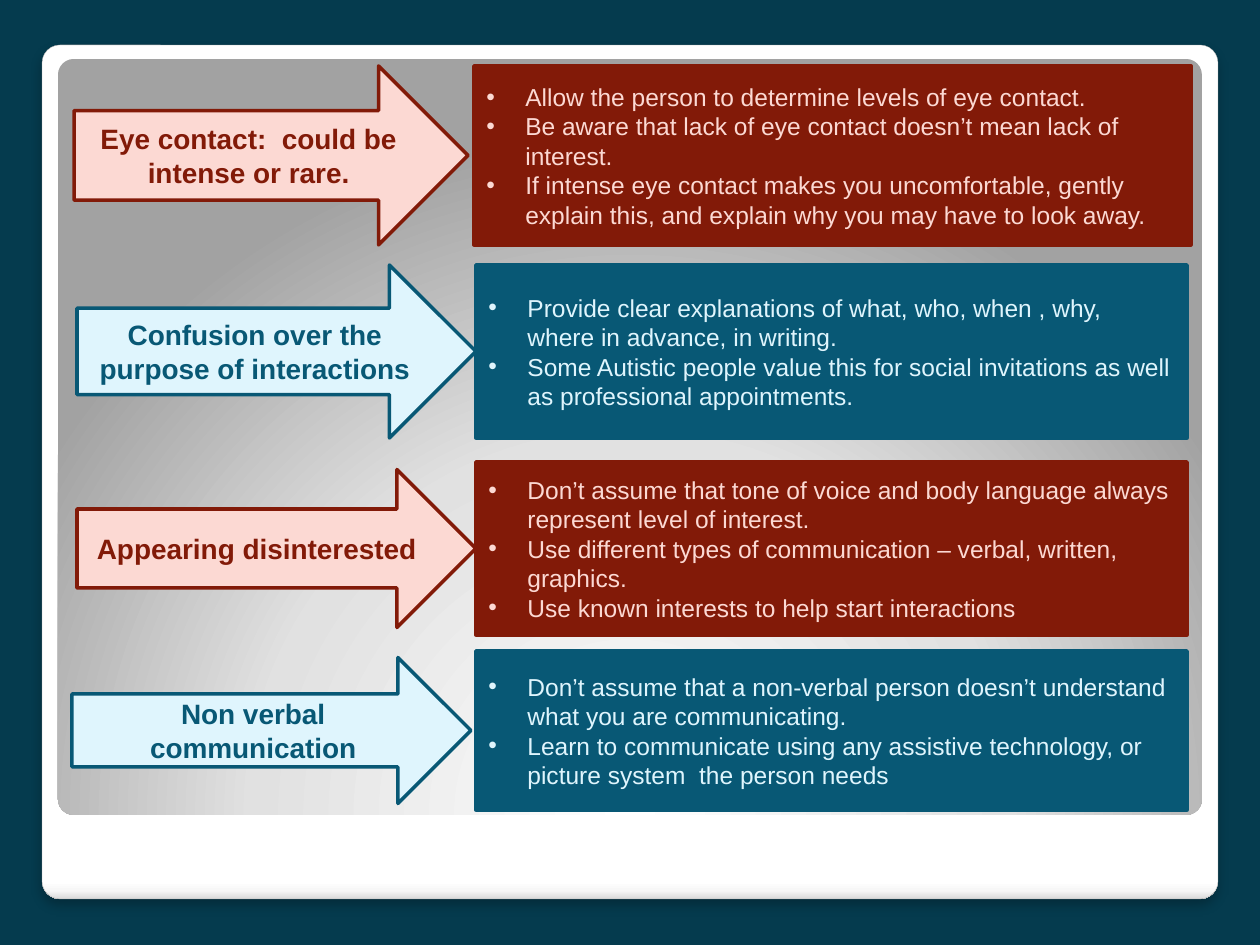
from lxml import etree
from pptx import Presentation, util as u
from pptx.dml.color import RGBColor
from pptx.enum import shapes, text
from pptx.oxml import parse_xml
from pptx.oxml.ns import nsdecls, qn

PX = 914400 / 126
FONT = "Arial"
COLORS = {
    "page": "053B4E", "card_line": "A4A4A4", "shadow": "000000",
    "red": "821A08", "pink": "FCD9D3", "blue": "085875", "ice": "DFF5FD",
}
CARD_STOPS = [(0, "FFFFFF"), (98, "FFFFFF"), (99, "F7F7F7"), (100, "DADADA")]
PANEL_STOPS = [(0, "FFFFFF"), (55, "E1E1E1"), (100, "A2A2A2")]
LINEAR = '<a:lin ang="5400000" scaled="0"/>'
RADIAL = ('<a:path path="circle"><a:fillToRect l="50000" t="175000" '
          'r="50000" b="-75000"/></a:path>')

# Row box, arrow left, arrow width, arrow height, dark, light, title, advice
ROWS = [
    ((474, 66, 717, 179), 74, 394, 179, "red", "pink",
     "Eye contact:  could be intense or rare.",
     ["Allow the person to determine levels of eye contact.",
      "Be aware that lack of eye contact doesn’t mean lack of interest.",
      "If intense eye contact makes you uncomfortable, gently explain this, "
      "and explain why you may have to look away."]),
    ((476, 265, 711, 173), 77, 399, 173, "blue", "ice",
     "Confusion over the purpose of interactions",
     ["Provide clear explanations of what, who, when , why, where in advance, "
      "in writing.",
      "Some Autistic people value this for social invitations as well as "
      "professional appointments."]),
    ((476, 462, 711, 173), 77, 399, 158, "red", "pink",
     "Appearing disinterested",
     ["Don’t assume that tone of voice and body language always represent "
      "level of interest.",
      "Use different types of communication – verbal, written, graphics.",
      "Use known interests to help start interactions"]),
    ((476, 651, 711, 159), 72, 399, 146, "blue", "ice",
     "Non verbal communication",
     ["Don’t assume that a non-verbal person doesn’t understand what you are "
      "communicating.",
      "Learn to communicate using any assistive technology, or picture system "
      " the person needs"]),
]


def px(length):
    return u.Emu(round(length * PX))


def rgb(name):
    return RGBColor.from_string(COLORS[name])


def add_block(page, kind, box):
    shape = page.shapes.add_shape(kind, *map(px, box))
    shape.shadow.inherit = False
    return shape


def add_gradient_panel(page, box, stops, direction):
    panel = add_block(page, shapes.MSO_SHAPE.ROUNDED_RECTANGLE, box)
    panel.adjustments[0] = 0.021
    panel.line.fill.background()
    panel.fill.background()
    marks = "".join(f'<a:gs pos="{pos * 1000}"><a:srgbClr val="{color}"/></a:gs>'
                    for pos, color in stops)
    gradient = parse_xml(f'<a:gradFill {nsdecls("a")} rotWithShape="1">'
                         f'<a:gsLst>{marks}</a:gsLst>{direction}</a:gradFill>')
    properties = panel.element.spPr
    properties.replace(properties.find(qn("a:noFill")), gradient)
    return panel


def add_background(page):
    page.background.fill.solid()
    page.background.fill.fore_color.rgb = rgb("page")

    # White card with a soft shadow
    card = add_gradient_panel(page, (42, 45, 1176, 854), CARD_STOPS, LINEAR)
    card.line.color.rgb = rgb("card_line")
    card.line.width = u.Pt(0.16)
    effects = card.element.spPr.find(qn("a:effectLst"))
    shadow = etree.SubElement(effects, qn("a:outerShdw"), blurRad=str(u.Pt(6)),
                              dist=str(u.Pt(4)), dir="5400000", rotWithShape="0")
    color = etree.SubElement(shadow, qn("a:srgbClr"), val=COLORS["shadow"])
    etree.SubElement(color, qn("a:alpha"), val="25000")

    # Grey panel lit from below
    add_gradient_panel(page, (58, 59, 1144, 756), PANEL_STOPS, RADIAL)


def paint(shape, fill, line):
    shape.fill.solid()
    shape.fill.fore_color.rgb = rgb(fill)
    shape.line.color.rgb = rgb(line)
    shape.line.width = u.Pt(2)


def write(shape, lines, size, color, align, bold=False):
    frame = shape.text_frame
    frame.word_wrap = True
    frame.vertical_anchor = text.MSO_ANCHOR.MIDDLE
    frame.text = "\n".join(lines)
    for para in frame.paragraphs:
        para.alignment = align
        for span in para.runs:
            span.font.name = FONT
            span.font.size = u.Pt(size)
            span.font.bold = bold
            span.font.color.rgb = rgb(color)


def add_bullets(shape):
    for para in shape.text_frame.paragraphs:
        properties = para._p.get_or_add_pPr()
        properties.set("marL", str(px(39)))
        properties.set("indent", str(-px(39)))
        etree.SubElement(properties, qn("a:buFont"), typeface=FONT)
        etree.SubElement(properties, qn("a:buChar"), char="•")


def add_row(page, box, arrow_left, arrow_width, arrow_height,
            dark, light, title, advice):
    # Arrow centred on the height of its advice box
    arrow_top = box[1] + (box[3] - arrow_height) / 2
    arrow = add_block(page, shapes.MSO_SHAPE.RIGHT_ARROW,
                      (arrow_left, arrow_top, arrow_width, arrow_height))
    paint(arrow, light, dark)
    write(arrow, [title], 16, dark, text.PP_ALIGN.CENTER, bold=True)

    # Advice box
    panel = add_block(page, shapes.MSO_SHAPE.RECTANGLE, box)
    paint(panel, dark, dark)
    write(panel, advice, 14, light, text.PP_ALIGN.LEFT)
    add_bullets(panel)


def main():
    deck = Presentation()
    deck.slide_width, deck.slide_height = px(1260), px(945)
    page = deck.slides.add_slide(deck.slide_layouts[6])
    add_background(page)
    for row in ROWS:
        add_row(page, *row)
    deck.save("out.pptx")


if __name__ == "__main__":
    main()
